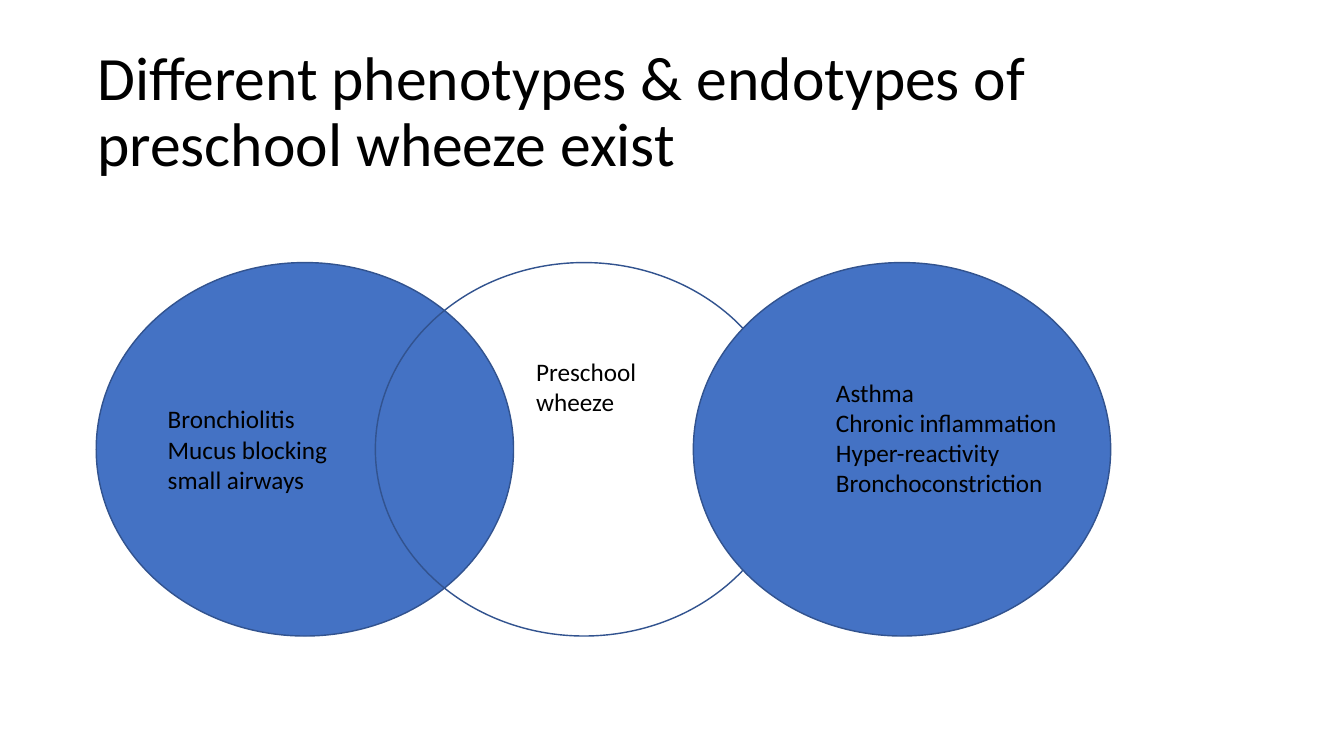
from pptx import Presentation
from pptx.dml.color import RGBColor
from pptx.enum.shapes import MSO_SHAPE
from pptx.enum.text import MSO_ANCHOR, MSO_AUTO_SIZE
from pptx.util import Inches, Pt

WIDTH, HEIGHT = Inches(26.67), Inches(15)
COLORS = {"circle": "4472C4", "outline": "32538F", "text": "000000"}
CIRCLE_TOP, CIRCLE_WIDTH, CIRCLE_HEIGHT = 34.73, 31.05, 49.4


def color(name):
    """Return the named palette colour."""
    return RGBColor.from_string(COLORS[name])


def area(left, top, width, height):
    """Turn percentages of the slide into a position and size."""
    return (int(WIDTH * left / 100), int(HEIGHT * top / 100),
            int(WIDTH * width / 100), int(HEIGHT * height / 100))


def add_circle(slide, left, filled):
    """Draw one circle of the overlapping row."""
    circle = slide.shapes.add_shape(
        MSO_SHAPE.OVAL, *area(left, CIRCLE_TOP, CIRCLE_WIDTH, CIRCLE_HEIGHT))
    circle.shadow.inherit = False
    if filled:
        circle.fill.solid()
        circle.fill.fore_color.rgb = color("circle")
    else:
        circle.fill.background()
    circle.line.color.rgb = color("outline")
    circle.line.width = Pt(2)


def add_text(slide, place, lines, size=36, spacing=None,
             anchor=MSO_ANCHOR.TOP, fit=MSO_AUTO_SIZE.SHAPE_TO_FIT_TEXT):
    """Write lines as paragraphs in a wrapping text box."""
    frame = slide.shapes.add_textbox(*area(*place)).text_frame
    frame.word_wrap = True
    frame.auto_size = fit
    frame.vertical_anchor = anchor
    frame.margin_left = frame.margin_right = Inches(0.1)
    frame.margin_top = frame.margin_bottom = Inches(0.1)
    frame.text = "\n".join(lines)
    for paragraph in frame.paragraphs:
        paragraph.line_spacing = spacing
        paragraph.font.name = "Calibri"
        paragraph.font.size = Pt(size)
        paragraph.font.color.rgb = color("text")


def main():
    """Build the wheeze phenotypes slide."""
    deck = Presentation()
    deck.slide_width, deck.slide_height = WIDTH, HEIGHT
    slide = deck.slides.add_slide(deck.slide_layouts[6])

    add_text(slide, (6.86, 5.33, 86.24, 19.33),
             ["Different phenotypes & endotypes of preschool wheeze exist"],
             size=88, spacing=0.9, anchor=MSO_ANCHOR.MIDDLE, fit=MSO_AUTO_SIZE.NONE)

    for left, filled in ((7.16, True), (27.93, False), (51.59, True)):
        add_circle(slide, left, filled)

    add_text(slide, (39.52, 46.47, 9.15, 8.73), ["Preschool wheeze"])
    add_text(slide, (12.11, 52.73, 15.45, 12.8),
             ["Bronchiolitis", "Mucus blocking small airways"])
    add_text(slide, (61.83, 49.2, 17.55, 16.87),
             ["Asthma", "Chronic inflammation", "Hyper-reactivity", "Bronchoconstriction"])

    deck.save("out.pptx")


if __name__ == "__main__":
    main()
